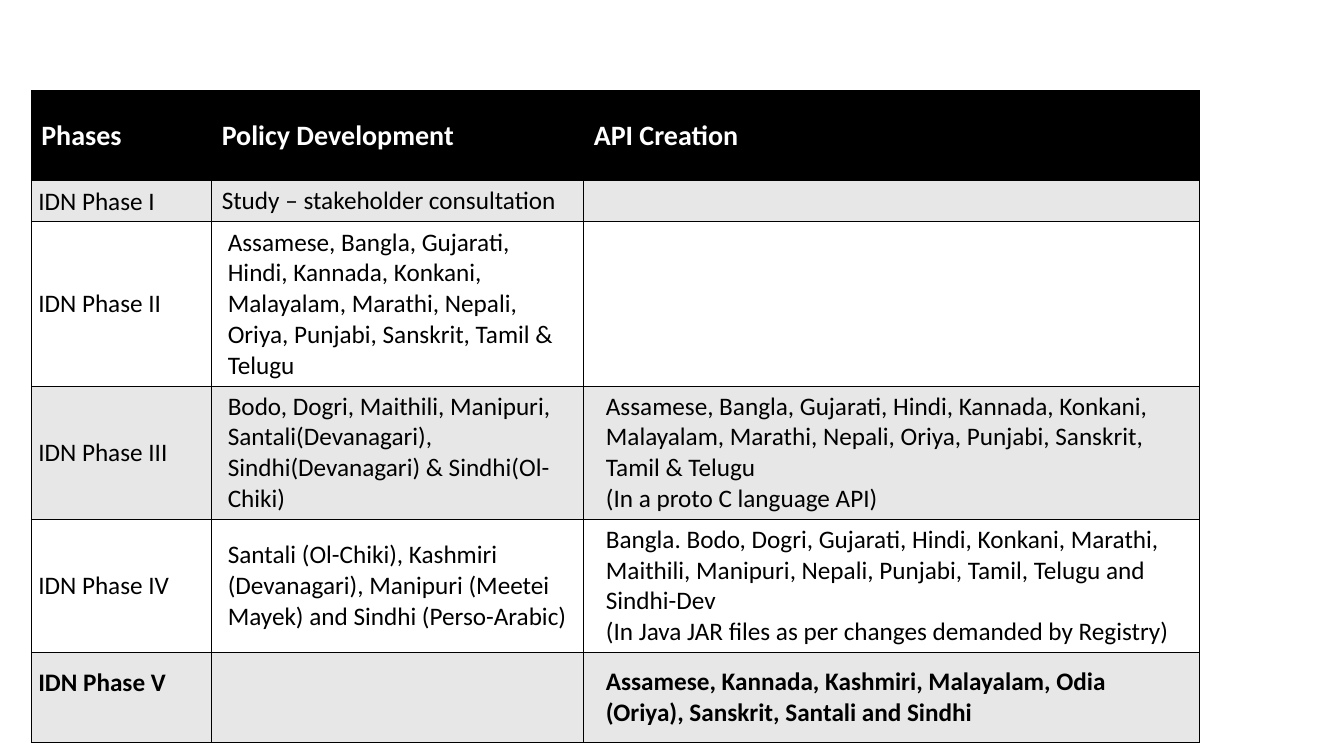
from dataclasses import dataclass
from pptx import Presentation
from pptx.dml.color import RGBColor
from pptx.enum.text import MSO_ANCHOR
from pptx.oxml.ns import qn
from pptx.util import Inches, Pt
from lxml.etree import SubElement

# Content: one list of paragraphs per cell
HEAD = ["Phases", "Policy Development", "API Creation"]
BASE = ("Assamese, Bangla, Gujarati, Hindi, Kannada, Konkani, Malayalam, Marathi, "
        "Nepali, Oriya, Punjabi, Sanskrit, Tamil & Telugu")
PHASES = [
    (["IDN Phase I"], ["Study – stakeholder consultation"], []),
    (["IDN Phase II"], [BASE], []),
    (["IDN Phase III"],
     ["Bodo, Dogri, Maithili, Manipuri, Santali(Devanagari), "
      "Sindhi(Devanagari) & Sindhi(Ol-Chiki)"],
     [BASE, "(In a proto C language API)"]),
    (["IDN Phase IV"],
     ["Santali (Ol-Chiki), Kashmiri (Devanagari), Manipuri (Meetei Mayek) "
      "and Sindhi (Perso-Arabic)"],
     ["Bangla. Bodo, Dogri, Gujarati, Hindi, Konkani, Marathi, Maithili, "
      "Manipuri, Nepali, Punjabi, Tamil, Telugu and Sindhi-Dev",
      "(In Java JAR files as per changes demanded by Registry)"]),
    (["IDN Phase V"], [],
     ["Assamese, Kannada, Kashmiri, Malayalam, Odia (Oriya), Sanskrit, "
      "Santali and Sindhi"]),
]
LAST = len(PHASES)

# Layout in inches
LEFT, TOP = 0.31, 0.9
COLS = [1.79, 3.69, 6.11]
ROWS = [0.89, 0.41, 1.63, 1.32, 1.32, 0.89]
INDENTS = [0.06, 0.06, 0.12]


@dataclass(frozen=True)
class Theme:
    font: str = "Calibri"
    head: int = 20
    body: int = 18
    rule: float = 0.5
    black: RGBColor = RGBColor(0, 0, 0)
    white: RGBColor = RGBColor(255, 255, 255)
    band: RGBColor = RGBColor(0xE7, 0xE7, 0xE7)


THEME = Theme()


def frame(cell):
    """Draw a thin line on all four sides of a cell."""
    props = cell._tc.get_or_add_tcPr()
    for side in ("a:lnL", "a:lnR", "a:lnT", "a:lnB"):
        line = SubElement(props, qn(side), w=str(Pt(THEME.rule)))
        fill = SubElement(line, qn("a:solidFill"))
        SubElement(fill, qn("a:srgbClr"), val=str(THEME.black))


def paint(cell, color):
    frame(cell)
    cell.fill.solid()
    cell.fill.fore_color.rgb = color
    cell.vertical_anchor = MSO_ANCHOR.MIDDLE


def write(cell, lines, size, color, bold, indent=0):
    text = cell.text_frame
    for i, line in enumerate(lines):
        para = text.paragraphs[0] if i == 0 else text.add_paragraph()
        if indent:
            props = para._p.get_or_add_pPr()
            props.set("marL", str(Inches(indent)))
            props.set("indent", "0")
        run = para.add_run()
        run.text = line
        font = run.font
        font.name, font.size, font.bold = THEME.font, Pt(size), bold
        font.color.rgb = color


def main():
    deck = Presentation()
    deck.slide_width, deck.slide_height = Inches(13.33), Inches(7.5)
    slide = deck.slides.add_slide(deck.slide_layouts[6])

    # Table grid
    table = slide.shapes.add_table(
        len(ROWS), len(COLS), Inches(LEFT), Inches(TOP),
        Inches(sum(COLS)), Inches(sum(ROWS))).table
    for col, width in zip(table.columns, COLS):
        col.width = Inches(width)
    for row, height in zip(table.rows, ROWS):
        row.height = Inches(height)

    # Header row
    for c, label in enumerate(HEAD):
        cell = table.cell(0, c)
        paint(cell, THEME.black)
        write(cell, [label], THEME.head, THEME.white, True)

    # Phase rows, banded, the latest phase in bold
    for r, phase in enumerate(PHASES, 1):
        for c, lines in enumerate(phase):
            cell = table.cell(r, c)
            paint(cell, THEME.band if r % 2 else THEME.white)
            indent = 0 if (r, c) == (1, 1) else INDENTS[c]
            write(cell, lines, THEME.body, THEME.black, r == LAST, indent)
            if c == 0:
                cell.margin_left = cell.margin_right = cell.margin_top = Inches(0.01)
                cell.margin_bottom = Inches(0.3 if r == LAST else 0)

    deck.save("out.pptx")


if __name__ == "__main__":
    main()
